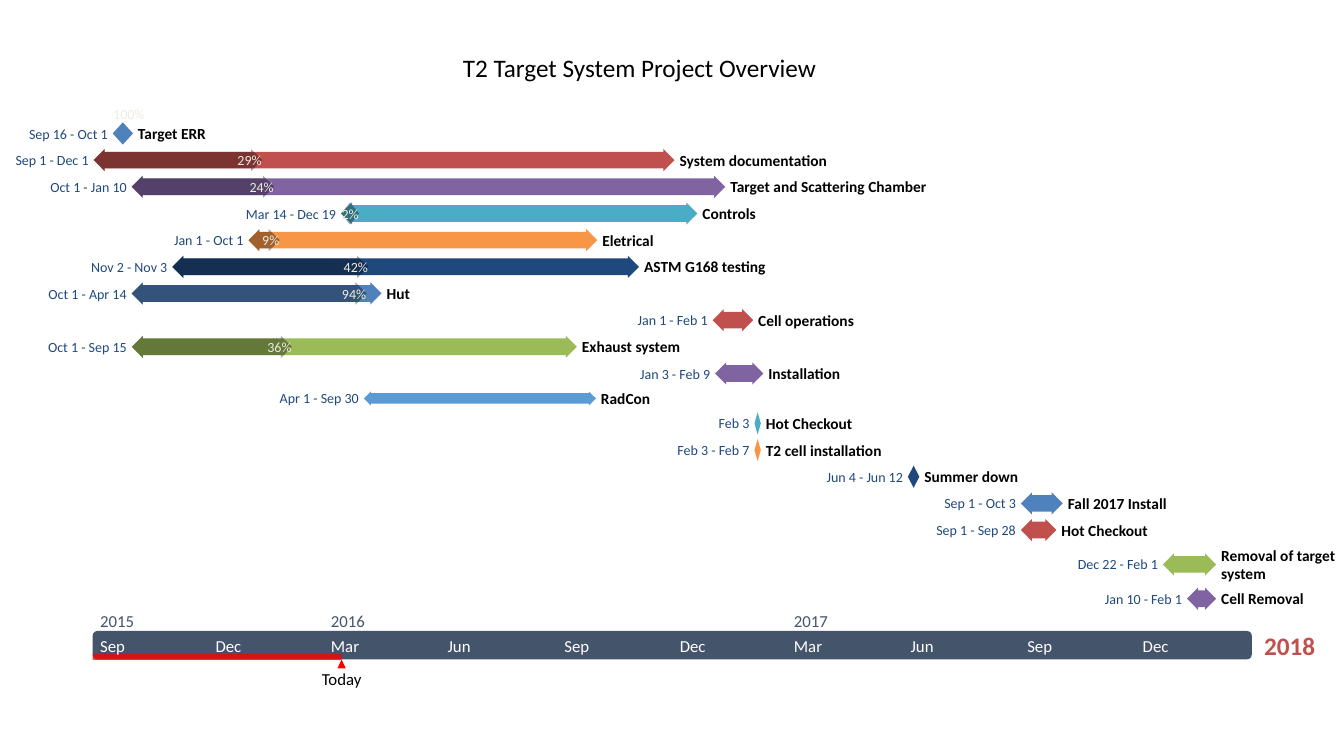
from dataclasses import dataclass

from lxml import etree
from pptx import Presentation
from pptx.dml.color import RGBColor
from pptx.enum import shapes, text
from pptx.oxml.ns import qn
from pptx.util import Pt


@dataclass(frozen=True)
class Theme:
    font: str = "Calibri"
    title_size: int = 18
    axis_size: int = 12
    name_size: int = 11
    small_size: int = 10
    black: str = "000000"
    white: str = "FFFFFF"
    slate: str = "44546A"
    date: str = "1F497E"
    percent: str = "EEECE1"
    today: str = "FF0000"
    blue: str = "4F81BD"
    red: str = "C0504D"
    purple: str = "8064A2"
    teal: str = "4BACC6"
    orange: str = "F79646"
    navy: str = "1F497D"
    green: str = "9BBB59"
    sky: str = "5B9BD5"


@dataclass(frozen=True)
class Task:
    start: str
    end: str
    name: str
    name_width: float
    color: str
    percent: int = 0
    row_height: float = 19.05
    bar_height: float = 15.84
    name_height: float = 13.4


THEME = Theme()
TASKS = [
    Task("Sep 16 2015", "Oct 1 2015", "Target ERR", 49, THEME.blue, 100),
    Task("Sep 1 2015", "Dec 1 2016", "System documentation", 105, THEME.red, 29),
    Task("Oct 1 2015", "Jan 10 2017", "Target and Scattering Chamber", 140, THEME.purple, 24),
    Task("Mar 14 2016", "Dec 19 2016", "Controls", 39, THEME.teal, 2),
    Task("Jan 1 2016", "Oct 1 2016", "Eletrical", 40, THEME.orange, 9),
    Task("Nov 2 2015", "Nov 3 2016", "ASTM G168 testing", 87, THEME.navy, 42),
    Task("Oct 1 2015", "Apr 14 2016", "Hut", 17, THEME.blue, 94),
    Task("Jan 1 2017", "Feb 1 2017", "Cell operations", 69, THEME.red),
    Task("Oct 1 2015", "Sep 15 2016", "Exhaust system", 71, THEME.green, 36),
    Task("Jan 3 2017", "Feb 9 2017", "Installation", 52, THEME.purple),
    Task("Apr 1 2016", "Sep 30 2016", "RadCon", 36, THEME.sky, row_height=16.6, bar_height=10),
    Task("Feb 3 2017", "Feb 3 2017", "Hot Checkout", 62, THEME.teal),
    Task("Feb 3 2017", "Feb 7 2017", "T2 cell installation", 83, THEME.orange),
    Task("Jun 4 2017", "Jun 12 2017", "Summer down", 67, THEME.navy),
    Task("Sep 1 2017", "Oct 3 2017", "Fall 2017 Install", 71, THEME.blue),
    Task("Sep 1 2017", "Sep 28 2017", "Hot Checkout", 62, THEME.red),
    Task("Dec 22 2017", "Feb 1 2018", "Removal of target system", 84, THEME.green,
         row_height=30, name_height=26.8),
    Task("Jan 10 2018", "Feb 1 2018", "Cell Removal", 59, THEME.purple),
]

MONTHS = "Jan Feb Mar Apr May Jun Jul Aug Sep Oct Nov Dec".split()
MONTH_DAYS = [31, 28, 31, 30, 31, 30, 31, 31, 30, 31, 30, 31]
AXIS_START = "Sep 1 2015"
TODAY = "Mar 14 2016"
AXIS_LEFT = 66.9
POINTS_PER_DAY = 0.906
ROWS_TOP = 85.8
BAND_LEFT, BAND_TOP, BAND_WIDTH, BAND_HEIGHT = 66.2, 450.7, 828, 20.2
LABEL_GAP = 3.6
TICK_INDENT = 4.6


def day_number(date):
    month, day, year = date.split()
    index, year = MONTHS.index(month), int(year)
    leap_day = year % 4 == 0 and index > 1
    return 365 * year + (year - 1) // 4 + sum(MONTH_DAYS[:index]) + int(day) + leap_day


def date_x(date, extra_days=0):
    days = day_number(date) - day_number(AXIS_START) + extra_days
    return AXIS_LEFT + days * POINTS_PER_DAY


def add_block(slide, preset, left, top, width, height, color, opacity=100):
    shape = slide.shapes.add_shape(preset, Pt(left), Pt(top), Pt(width), Pt(height))
    shape.shadow.inherit = False
    shape.fill.solid()
    shape.fill.fore_color.rgb = RGBColor.from_string(color)
    shape.line.fill.background()
    if opacity < 100:
        tint = shape.fill._xPr.find(".//" + qn("a:srgbClr"))
        etree.SubElement(tint, qn("a:alpha")).set("val", str(opacity * 1000))
    return shape


def add_arrow(slide, left, middle, width, height, color, opacity=100):
    arrow = add_block(slide, shapes.MSO_SHAPE.LEFT_RIGHT_ARROW, left, middle - height / 2,
                      width, height, color, opacity)
    arrow.adjustments[0] = 0.75
    arrow.adjustments[1] = 0.5


def add_label(slide, content, left, middle, width, height, size, color,
              align=text.PP_ALIGN.LEFT, bold=False, wrap=False):
    box = slide.shapes.add_textbox(Pt(left), Pt(middle - height / 2), Pt(width), Pt(height))
    frame_format = {"word_wrap": wrap, "vertical_anchor": text.MSO_ANCHOR.MIDDLE,
                    "margin_left": 0, "margin_top": 0, "margin_right": 0, "margin_bottom": 0}
    for name, value in frame_format.items():
        setattr(box.text_frame, name, value)
    paragraph = box.text_frame.paragraphs[0]
    paragraph.alignment = align
    run = paragraph.add_run()
    run.text = content
    for name, value in {"name": THEME.font, "size": Pt(size), "bold": bold}.items():
        setattr(run.font, name, value)
    run.font.color.rgb = RGBColor.from_string(color)


def add_progress(slide, task, left, middle, width):
    content = f"{task.percent}%"
    label_width = 5 * len(content) + 3
    if label_width > width:
        label_left, label_middle = left, middle - 14
    else:
        done_width = max(width * task.percent / 100, label_width)
        add_arrow(slide, left, middle, done_width, task.bar_height, THEME.black, 35)
        label_left, label_middle = left + done_width - label_width, middle
    add_label(slide, content, label_left, label_middle, label_width, 12.2,
              THEME.small_size, THEME.percent, text.PP_ALIGN.CENTER)


def add_task(slide, task, middle):
    left = date_x(task.start)
    width = max(date_x(task.end, 1) - left, 4.5)
    add_arrow(slide, left, middle, width, task.bar_height, task.color)
    if task.percent:
        add_progress(slide, task, left, middle, width)
    days = [date.rsplit(" ", 1)[0] for date in (task.start, task.end)]
    dates = " - ".join(dict.fromkeys(days))
    date_width = 4 * len(dates) + 5
    add_label(slide, dates, left - LABEL_GAP - date_width, middle, date_width, 12.2,
              THEME.small_size, THEME.date, text.PP_ALIGN.RIGHT)
    add_label(slide, task.name, left + width + LABEL_GAP, middle, task.name_width + 3,
              task.name_height, THEME.name_size, THEME.black, bold=True, wrap=True)


def add_axis(slide):
    rounded = shapes.MSO_SHAPE.ROUNDED_RECTANGLE
    middle = BAND_TOP + BAND_HEIGHT / 2 + 0.4
    today_x = date_x(TODAY, 0.5)
    add_block(slide, rounded, BAND_LEFT, BAND_TOP, BAND_WIDTH, BAND_HEIGHT, THEME.slate)
    add_block(slide, rounded, BAND_LEFT, 467.1, today_x - BAND_LEFT, 4.3, THEME.today, 75)
    add_block(slide, shapes.MSO_SHAPE.ISOSCELES_TRIANGLE, today_x - 3, 471, 6, 6.5, THEME.today)
    add_label(slide, "Today", today_x - 17, 484.6, 34, 14.6, THEME.axis_size, THEME.black,
              text.PP_ALIGN.CENTER)
    for tick in range(10):
        years, month = divmod(8 + 3 * tick, 12)
        left = date_x(f"{MONTHS[month]} 1 {2015 + years}") + TICK_INDENT
        add_label(slide, MONTHS[month], left, middle, 26, 14, THEME.axis_size, THEME.white)
    for first_tick in (AXIS_START, "Mar 1 2016", "Mar 1 2017"):
        add_label(slide, first_tick[-4:], date_x(first_tick) + TICK_INDENT, 443.5, 30, 14.4,
                  THEME.axis_size, THEME.slate)
    add_label(slide, "2018", 899.3, middle, 44, 22.3, THEME.title_size, THEME.red,
              text.PP_ALIGN.CENTER, bold=True)


def main():
    presentation = Presentation()
    presentation.slide_width, presentation.slide_height = Pt(960), Pt(540)
    slide = presentation.slides.add_slide(presentation.slide_layouts[6])
    add_axis(slide)
    row_top = ROWS_TOP
    for task in TASKS:
        add_task(slide, task, row_top + task.row_height / 2)
        row_top += task.row_height
    add_label(slide, "T2 Target System Project Overview", 283.7, 48, 346.3, 28.8,
              THEME.title_size, THEME.black, text.PP_ALIGN.CENTER, wrap=True)
    presentation.save("out.pptx")


if __name__ == "__main__":
    main()
